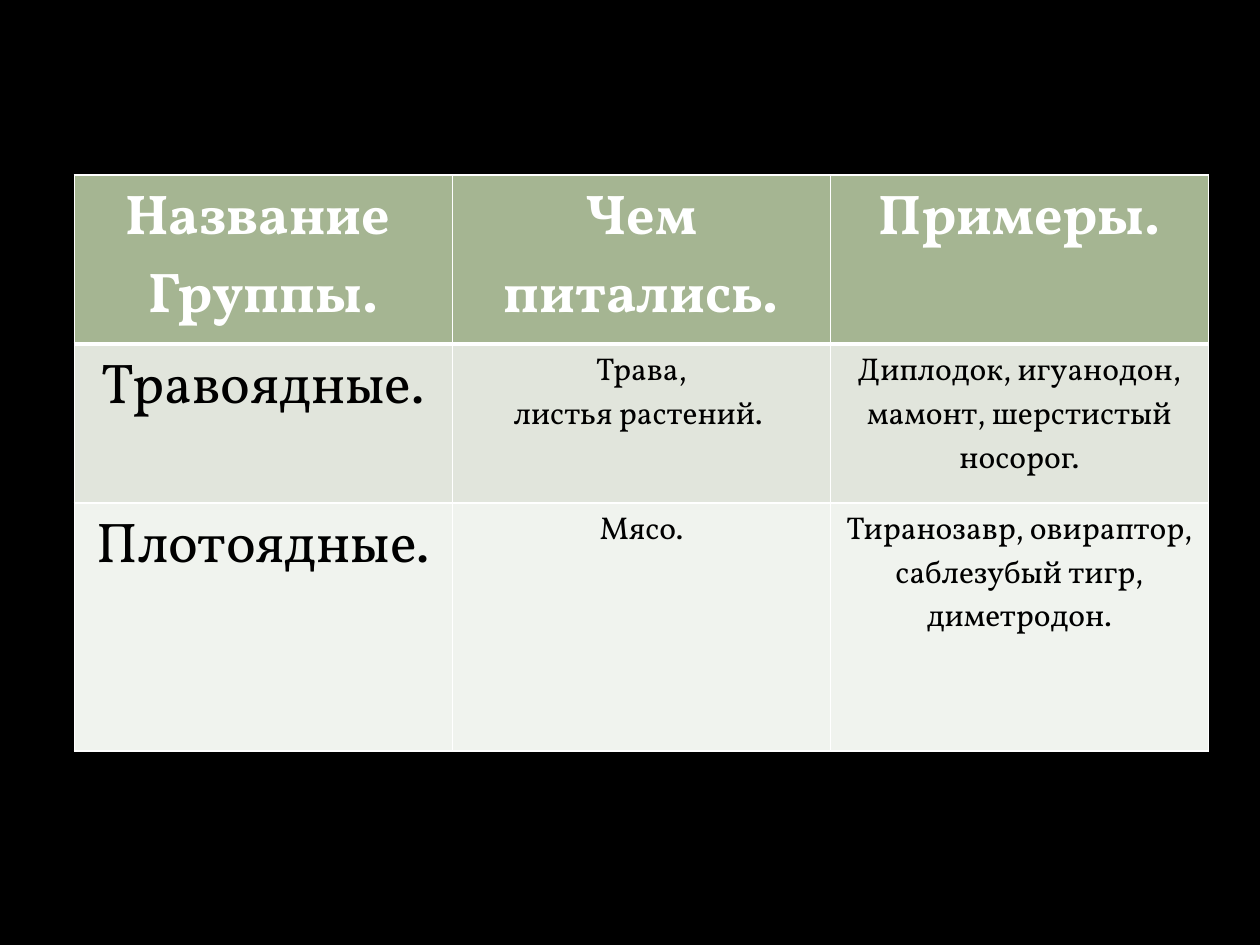
from lxml import etree
from pptx import Presentation
from pptx.dml.color import RGBColor
from pptx.enum.text import PP_ALIGN
from pptx.oxml.ns import qn
from pptx.util import Inches, Pt

CENTER = PP_ALIGN.CENTER
BLACK, WHITE = "000000", "FFFFFF"
FILLS = ["A5B592", "E1E5DC", "F0F3EE"]
ROWS = [
    ["Название \nГруппы.", "Чем питались.", "Примеры."],
    ["Травоядные.", "Трава,\nлистья растений. ",
     "Диплодок, игуанодон, мамонт, шерстистый носорог."],
    ["Плотоядные.", "Мясо.",
     "Тиранозавр, овираптор, саблезубый тигр, диметродон."],
]


def color(code):
    return RGBColor.from_string(code)


class Deck:
    font = "Vollkorn"
    big, small = Pt(32), Pt(18)
    thin, thick = Pt(1), Pt(3)

    def __init__(self, wide, high):
        self.prs = Presentation()
        self.prs.slide_width, self.prs.slide_height = Inches(wide), Inches(high)
        self.slide = self.prs.slides.add_slide(self.prs.slide_layouts[6])

    def back(self, code):
        fill = self.slide.background.fill
        fill.solid()
        fill.fore_color.rgb = color(code)

    def table(self, rows, box, highs):
        grid = self.slide.shapes.add_table(
            len(rows), len(rows[0]), *map(Inches, box)).table
        for row, high in zip(grid.rows, highs):
            row.height = Inches(high)
        for r, texts in enumerate(rows):
            for c, text in enumerate(texts):
                cell = grid.cell(r, c)
                self.edges(cell, r)
                cell.fill.solid()
                cell.fill.fore_color.rgb = color(FILLS[r])
                self.text(cell, text, {
                    "name": self.font,
                    "size": self.big if r == 0 or c == 0 else self.small,
                    "bold": r == 0,
                }, WHITE if r == 0 else BLACK)

    def edges(self, cell, r):
        """Draw white cell borders, thick between header and body."""
        props = cell._tc.get_or_add_tcPr()
        heavy = {0: "lnB", 1: "lnT"}.get(r)
        for side in ("lnL", "lnR", "lnT", "lnB"):
            width = self.thick if side == heavy else self.thin
            line = etree.SubElement(props, qn("a:" + side), w=str(int(width)))
            fill = etree.SubElement(line, qn("a:solidFill"))
            etree.SubElement(fill, qn("a:srgbClr"), val=WHITE)

    def text(self, cell, text, style, code):
        cell.text_frame.text = text
        for para in cell.text_frame.paragraphs:
            para.alignment = CENTER
            font = para.runs[0].font
            for key, value in style.items():
                setattr(font, key, value)
            font.color.rgb = color(code)


def main():
    deck = Deck(10, 7.5)
    deck.back(BLACK)
    deck.table(ROWS, (0.59, 1.39, 9, 4.57), (1.34, 1.26, 1.97))
    deck.prs.save("out.pptx")


if __name__ == "__main__":
    main()
